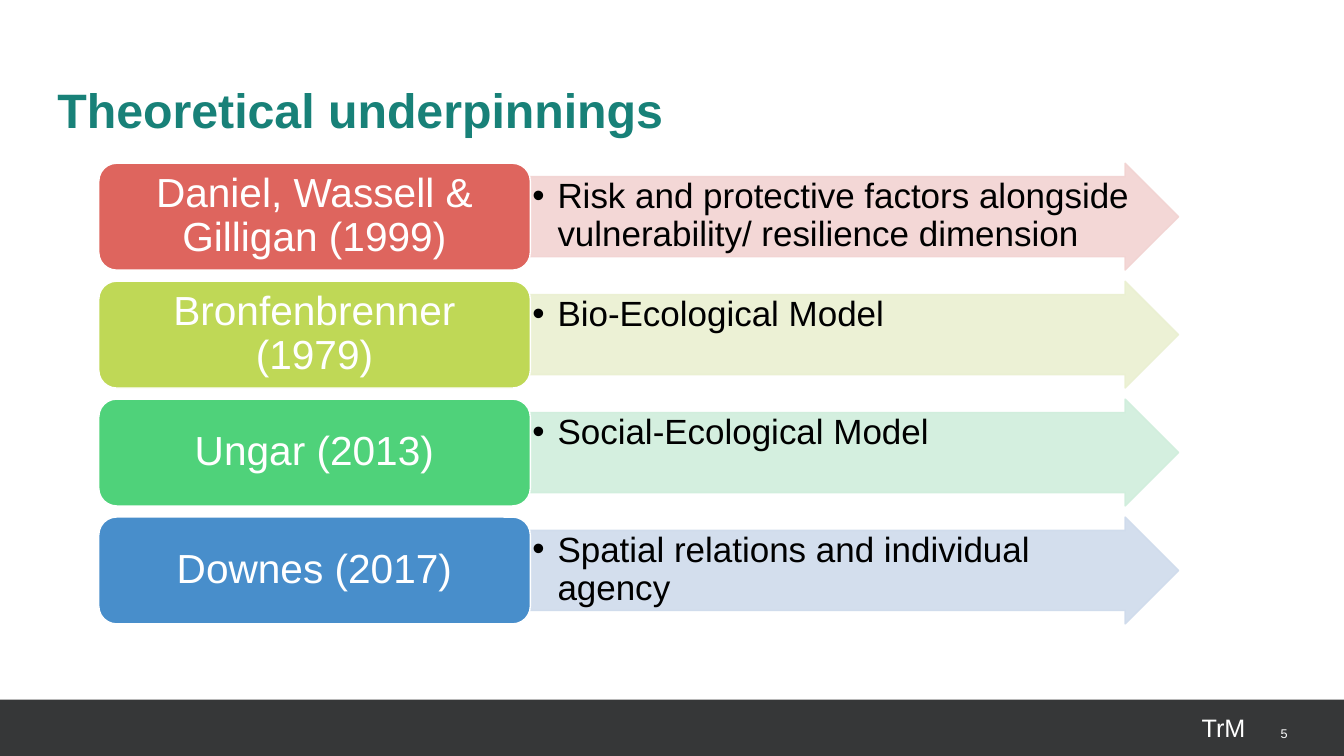
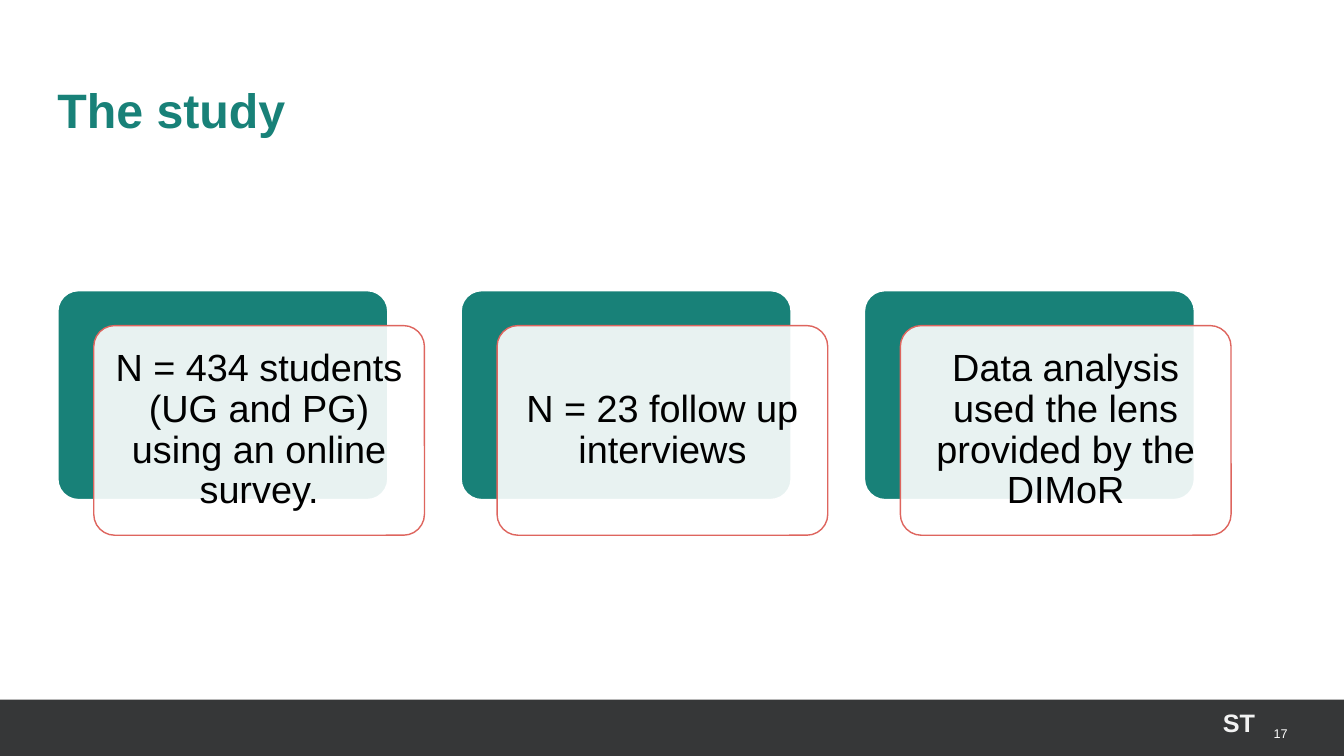
"""Build two slides: theoretical underpinnings and the study."""
from lxml.etree import SubElement
from pptx import Presentation
from pptx.dml.color import RGBColor
from pptx.enum.shapes import MSO_SHAPE
from pptx.enum.text import MSO_ANCHOR, PP_ALIGN
from pptx.oxml.ns import qn
from pptx.util import Inches, Pt

TEAL, CORAL, WHITE, BLACK, CHARCOAL = "188178", "DE655E", "FFFFFF", "000000", "363738"

THEORIES = [
    ("Daniel, Wassell & Gilligan (1999)",
     "Risk and protective factors alongside vulnerability/ resilience dimension", CORAL, "F2D3D2"),
    ("Bronfenbrenner (1979)", "Bio-Ecological Model", "BFD856", "EAF0D1"),
    ("Ungar (2013)", "Social-Ecological Model", "4FD27A", "D0EEDC"),
    ("Downes (2017)", "Spatial relations and individual agency", "488ECB", "CFDBEC"),
]
STUDY_STEPS = [
    "N = 434 students (UG and PG) using an online survey.",
    "N = 23 follow up interviews",
    "Data analysis used the lens provided by the DIMoR",
]

TITLE_FONT = {"size": Pt(34.5), "bold": True}
LABEL_FONT = {"size": Pt(29)}
DETAIL_FONT = {"size": Pt(25)}
CARD_FONT = {"size": Pt(27)}
NUMBER_FONT = {"size": Pt(9)}
CENTRED = {"alignment": PP_ALIGN.CENTER, "line_spacing": 0.9}
NO_MARGINS = (0, 0, 0, 0)


def color(value):
    """Turn a hex string into a colour."""
    return RGBColor.from_string(value)


def apply(target, values):
    """Set every attribute named in a dict of format values."""
    for name, value in values.items():
        setattr(target, name, value)


def write(box, text, font, ink, layout, margins, anchor=MSO_ANCHOR.TOP):
    """Write one formatted paragraph into a box and return it."""
    frame = box.text_frame
    sides = ("margin_left", "margin_top", "margin_right", "margin_bottom")
    apply(frame, dict(zip(sides, map(Inches, margins))))
    apply(frame, {"word_wrap": True, "vertical_anchor": anchor})
    para = frame.paragraphs[0]
    apply(para, layout)
    span = para.add_run()
    span.text = text
    apply(span.font, {"name": "Arial", **font})
    span.font.color.rgb = color(ink)
    return para


def add_text(page, place, *content):
    """Add a text box at a place given in inches."""
    return write(page.shapes.add_textbox(*map(Inches, place)), *content)


def add_block(page, kind, place, fill, line=None, width=1, adjustments=(), opacity=100):
    """Add a filled preset shape, its fill colour optionally translucent."""
    block = page.shapes.add_shape(kind, *map(Inches, place))
    block.shadow.inherit = False
    block.fill.solid()
    block.fill.fore_color.rgb = color(fill)
    if line:
        block.line.color.rgb = color(line)
        block.line.width = Pt(width)
    else:
        block.line.fill.background()
    for index, value in enumerate(adjustments):
        block.adjustments[index] = value
    if opacity < 100:
        for shade in block._element.spPr.iter(qn("a:srgbClr")):
            if shade.get("val") == fill:
                SubElement(shade, qn("a:alpha"), val=str(opacity * 1000))
    return block


def add_bullet(para, indent):
    """Give a paragraph a round bullet with a hanging indent."""
    properties = para._p.get_or_add_pPr()
    properties.set("marL", str(Inches(indent)))
    properties.set("indent", str(-Inches(indent)))
    SubElement(properties, qn("a:buFont"), typeface="Arial")
    SubElement(properties, qn("a:buChar"), char="•")


def add_page(deck, title, number, initials, place, ink, bold):
    """Add a page with the shared title, footer band, number and initials."""
    page = deck.slides.add_slide(deck.slide_layouts[6])
    add_block(page, MSO_SHAPE.RECTANGLE, (0, 6.94, 13.33, 0.57), CHARCOAL)
    add_text(page, (12.22, 6.94, 0.55, 0.55), str(number), NUMBER_FONT, WHITE,
             {"alignment": PP_ALIGN.RIGHT, "line_spacing": Pt(19)}, NO_MARGINS, MSO_ANCHOR.MIDDLE)
    add_text(page, (0.57, 0.92, 7.67, 0.79), title, TITLE_FONT, TEAL,
             {"line_spacing": Pt(32.5)}, NO_MARGINS)
    add_text(page, place, initials, {"size": Pt(18), "bold": bold}, ink,
             {}, (0.1, 0.05, 0.1, 0.05))
    return page


def add_theories(page):
    """Draw one label and arrow per theory."""
    left, top, label_width, arrow_width, height, pitch = 0.98, 1.62, 4.28, 6.43, 1.06, 1.17
    shaft_inset, detail_width, detail_height = 0.13, 6.03, 0.8
    arrow_left = left + label_width
    for row, (label, detail, strong, pale) in enumerate(THEORIES):
        y = top + row * pitch
        add_block(page, MSO_SHAPE.RIGHT_ARROW, (arrow_left, y, arrow_width, height),
                  pale, pale, adjustments=(0.75, 0.5), opacity=90)
        para = add_text(page, (arrow_left, y + shaft_inset, detail_width, detail_height),
                        detail, DETAIL_FONT, BLACK, {"line_spacing": 0.9}, (0.02,) * 4)
        add_bullet(para, 0.25)
        name = add_block(page, MSO_SHAPE.ROUNDED_RECTANGLE, (left, y, label_width, height),
                         strong, WHITE)
        write(name, label, LABEL_FONT, WHITE, CENTRED, (0.12, 0.06, 0.12, 0.06), MSO_ANCHOR.MIDDLE)


def add_study(page):
    """Draw one offset card over a teal panel per study step."""
    left, top, width, height, pitch = 0.57, 2.88, 3.28, 2.08, 4
    shift_right, shift_down = 0.36, 0.35
    for column, step in enumerate(STUDY_STEPS):
        x = left + column * pitch
        add_block(page, MSO_SHAPE.ROUNDED_RECTANGLE, (x, top, width, height),
                  TEAL, WHITE, 1.5, (0.1,))
        card = add_block(page, MSO_SHAPE.ROUNDED_RECTANGLE,
                         (x + shift_right, top + shift_down, width, height),
                         WHITE, CORAL, 1, (0.1,), 90)
        write(card, step, CARD_FONT, BLACK, CENTRED, (0.11,) * 4, MSO_ANCHOR.MIDDLE)


def main():
    """Build and save the deck."""
    deck = Presentation()
    apply(deck, {"slide_width": Inches(13.33), "slide_height": Inches(7.5)})
    add_theories(add_page(deck, "Theoretical underpinnings", 5, "TrM",
                          (11.82, 7.02, 0.74, 0.4), WHITE, False))
    add_study(add_page(deck, "The study", 17, "ST",
                       (12.03, 6.97, 0.62, 0.4), "F2F2F2", True))
    deck.save("out.pptx")


if __name__ == "__main__":
    main()
